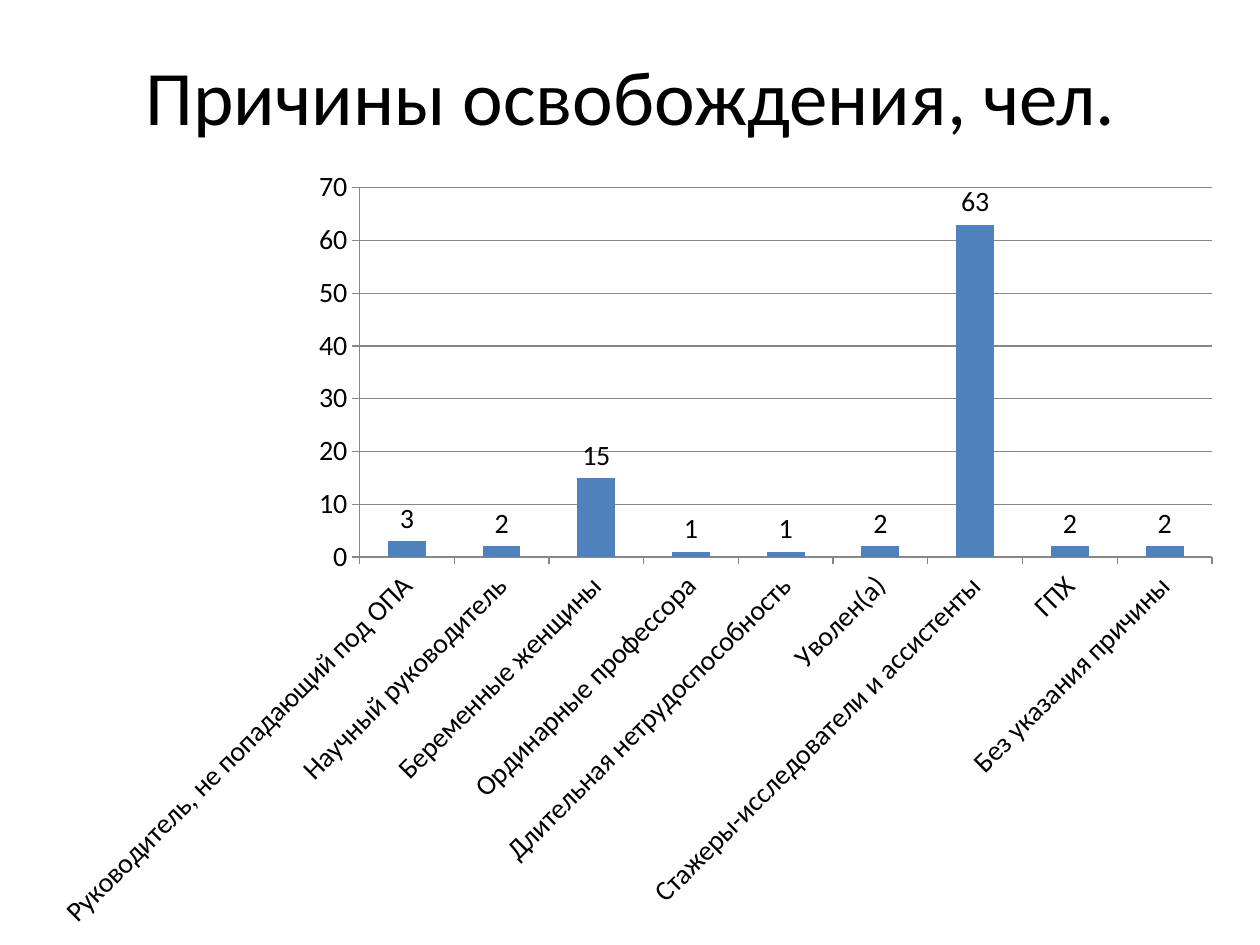
from pptx import Presentation
from pptx.chart.data import CategoryChartData
from pptx.dml.color import RGBColor
from pptx.enum.chart import XL_CHART_TYPE as CHART, XL_LABEL_POSITION as LABEL, XL_TICK_MARK as TICK
from pptx.enum.text import MSO_ANCHOR, PP_ALIGN
from pptx.util import Inches, Pt

TITLE = "Причины освобождения, чел."
REASONS = [
    ("Руководитель, не попадающий под ОПА", 3),
    ("Научный руководитель", 2),
    ("Беременные женщины", 15),
    ("Ординарные профессора", 1),
    ("Длительная нетрудоспособность", 1),
    ("Уволен(а)", 2),
    ("Стажеры-исследователи и ассистенты", 63),
    ("ГПХ", 2),
    ("Без указания причины", 2),
]
COLORS = {"text": "000000", "bar": "4F81BD", "line": "878787"}
TITLE_BOX = (0.51, 0.13, 9, 1.25)
CHART_BOX = (0.28, 1.23, 9.53, 6.27)


def rgb(name):
    return RGBColor.from_string(COLORS[name])


def style_font(font, size):
    for key, value in {"size": Pt(size), "name": "Calibri", "bold": False}.items():
        setattr(font, key, value)
    font.color.rgb = rgb("text")


def style_line(line):
    line.color.rgb = rgb("line")
    line.width = Pt(0.75)


def add_title(s):
    sp = s.shapes.title
    sp.left, sp.top, sp.width, sp.height = map(Inches, TITLE_BOX)
    tf = sp.text_frame
    tf.text = TITLE
    tf.vertical_anchor = MSO_ANCHOR.MIDDLE
    p = tf.paragraphs[0]
    p.alignment = PP_ALIGN.CENTER
    style_font(p.runs[0].font, 44)


def add_reasons_chart(s):
    data = CategoryChartData()
    data.categories = [reason for reason, _ in REASONS]
    data.add_series("Series 1", [count for _, count in REASONS])
    chart = s.shapes.add_chart(CHART.COLUMN_CLUSTERED, *map(Inches, CHART_BOX), data).chart
    chart.has_legend = chart.has_title = False
    style_font(chart.font, 16)

    for axis in (chart.category_axis, chart.value_axis):
        axis.major_tick_mark = TICK.OUTSIDE
        axis.minor_tick_mark = TICK.NONE
        style_line(axis.format.line)
    chart.category_axis.has_major_gridlines = False
    values = chart.value_axis
    for key, value in {"minimum_scale": 0, "maximum_scale": 70, "major_unit": 10,
                       "has_major_gridlines": True}.items():
        setattr(values, key, value)
    style_line(values.major_gridlines.format.line)

    plot = chart.plots[0]
    plot.gap_width = 150
    plot.vary_by_categories = False
    fill = plot.series[0].format.fill
    fill.solid()
    fill.fore_color.rgb = rgb("bar")
    plot.has_data_labels = True
    labels = plot.data_labels
    labels.show_value = True
    labels.position = LABEL.OUTSIDE_END
    style_font(labels.font, 16)


def main():
    prs = Presentation()
    prs.slide_width, prs.slide_height = Inches(10), Inches(7.5)
    s = prs.slides.add_slide(prs.slide_layouts[5])
    add_title(s)
    add_reasons_chart(s)
    prs.save("out.pptx")


if __name__ == "__main__":
    main()
